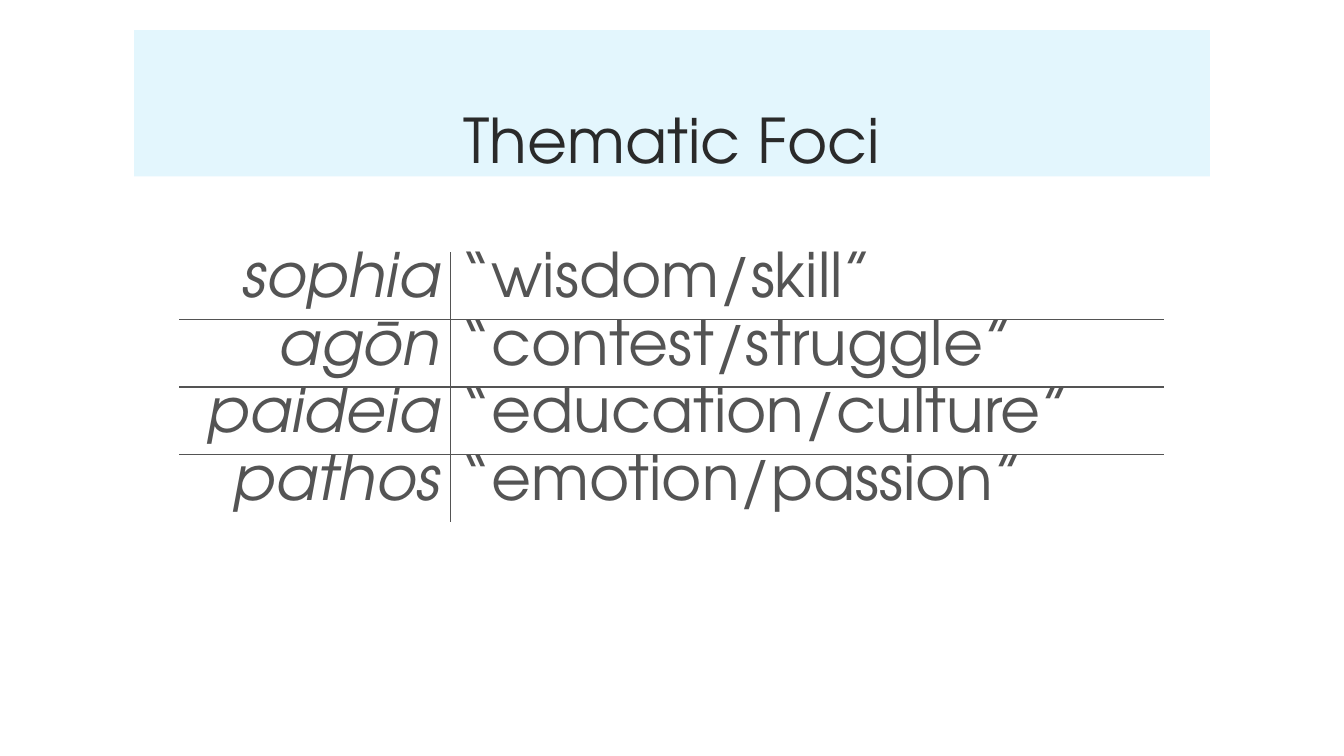
from lxml import etree
from pptx import Presentation
from pptx.dml.color import RGBColor
from pptx.enum import shapes, text
from pptx.oxml import ns
from pptx.util import Inches, Pt

FONT = "TeX Gyre Adventor"
TITLE_COLOR = RGBColor(0x2A, 0x2A, 0x2A)
BODY_COLOR = RGBColor(0x54, 0x54, 0x54)
BAND_COLOR = RGBColor(0x00, 0xB0, 0xF0)
BAND_OPACITY = 11

FOCI = [
    ("sophia", "“wisdom/skill”"),
    ("agōn", "“contest/struggle”"),
    ("paideia", "“education/culture”"),
    ("pathos", "“emotion/passion”"),
]


def add_run(paragraph, words, color, italic=False):
    run = paragraph.add_run()
    run.text = words
    run.font.name = FONT
    run.font.size = Pt(44)
    run.font.italic = italic
    run.font.color.rgb = color


def set_borders(cell, visible_sides):
    """Draw a thin line on the named sides and none on the others."""
    properties = cell._tc.get_or_add_tcPr()
    for index, side in enumerate(("lnL", "lnR", "lnT", "lnB")):
        line = etree.Element(ns.qn(f"a:{side}"), w=str(Pt(1)))
        if side in visible_sides:
            fill = etree.SubElement(line, ns.qn("a:solidFill"))
            etree.SubElement(fill, ns.qn("a:srgbClr"), val=str(BODY_COLOR))
        else:
            etree.SubElement(line, ns.qn("a:noFill"))
        properties.insert(index, line)


def add_title_band(slide, left, top, width, height):
    band = slide.shapes.add_shape(
        shapes.MSO_SHAPE.RECTANGLE, left, top, width, height)
    band.shadow.inherit = False
    band.line.fill.background()
    band.fill.solid()
    band.fill.fore_color.rgb = BAND_COLOR
    color = band._element.spPr.find(f".//{ns.qn('a:srgbClr')}")
    etree.SubElement(color, ns.qn("a:alpha"), val=str(BAND_OPACITY * 1000))

    frame = band.text_frame
    frame.word_wrap = True
    frame.vertical_anchor = text.MSO_ANCHOR.BOTTOM
    frame.margin_bottom = 0
    paragraph = frame.paragraphs[0]
    paragraph.alignment = text.PP_ALIGN.CENTER
    paragraph.line_spacing = 0.9
    add_run(paragraph, "Thematic Foci", TITLE_COLOR)


def add_foci_table(slide, left, top, width, height):
    table = slide.shapes.add_table(
        len(FOCI), 2, left, top, width, height).table
    table.first_row = table.horz_banding = False
    term_width = Inches(2.69)
    table.columns[0].width = term_width
    table.columns[1].width = width - term_width

    for row, focus in enumerate(FOCI):
        for column, words in enumerate(focus):
            is_term = column == 0
            cell = table.cell(row, column)
            cell.fill.background()
            cell.margin_top = cell.margin_bottom = 0
            paragraph = cell.text_frame.paragraphs[0]
            paragraph.alignment = (
                text.PP_ALIGN.RIGHT if is_term else text.PP_ALIGN.LEFT)
            add_run(paragraph, words, BODY_COLOR, italic=is_term)

            # Only the lines between cells show
            sides = ["lnR" if is_term else "lnL"]
            if row > 0:
                sides.append("lnT")
            if row < len(FOCI) - 1:
                sides.append("lnB")
            set_borders(cell, sides)


def main():
    presentation = Presentation()
    presentation.slide_width = Inches(13.33)
    presentation.slide_height = Inches(7.5)
    slide = presentation.slides.add_slide(presentation.slide_layouts[6])
    add_foci_table(
        slide, Inches(1.78), Inches(2.5), Inches(9.77), Inches(2.68))
    add_title_band(
        slide, Inches(1.33), Inches(0.3), Inches(10.67), Inches(1.45))
    presentation.save("out.pptx")


if __name__ == "__main__":
    main()
